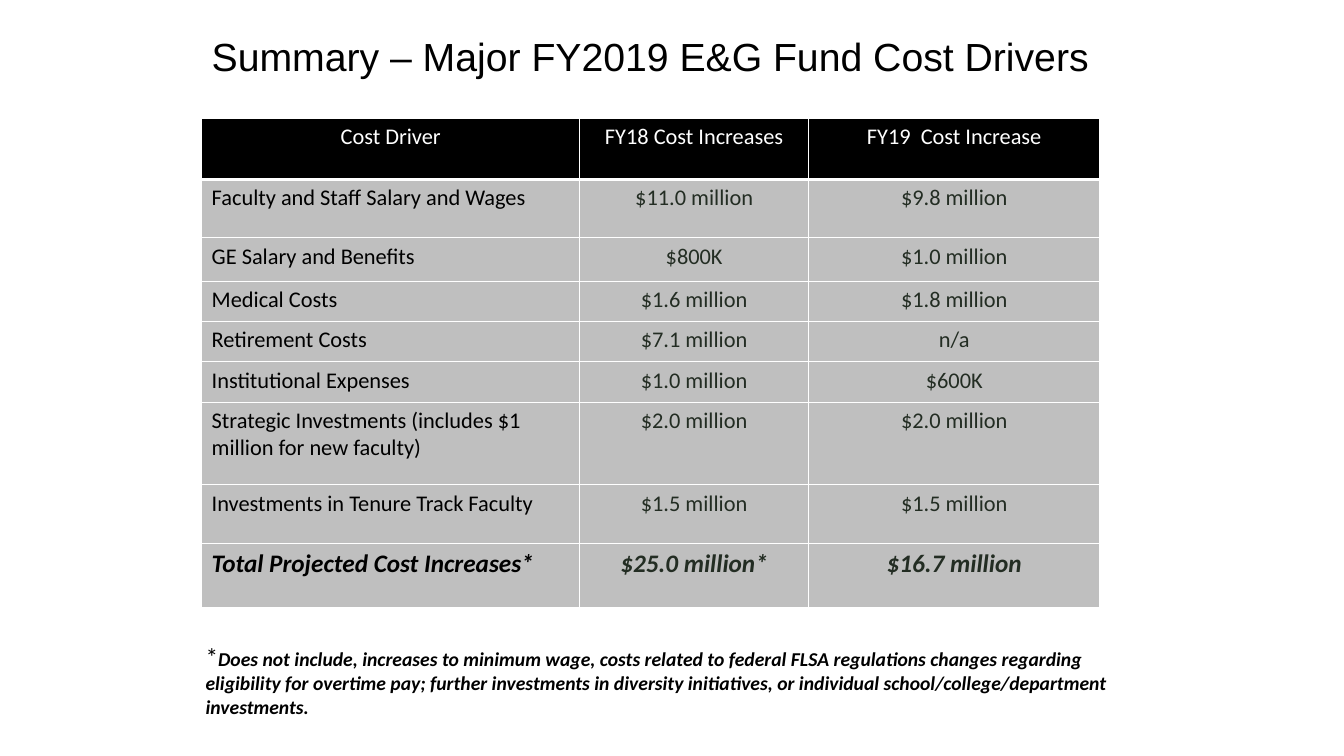
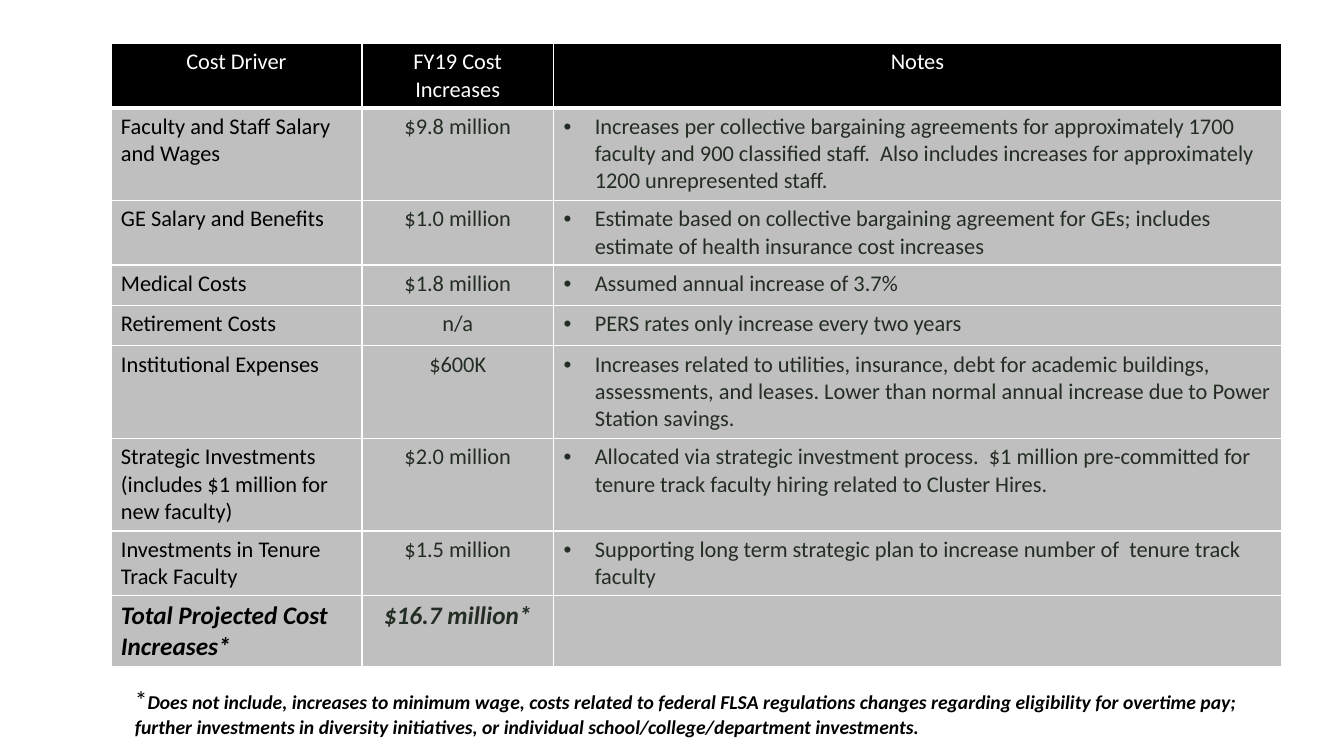
"""Build the two FY2019 cost driver slides."""
import pptx
import pptx.dml.color
import pptx.enum.text
import pptx.oxml
import pptx.oxml.ns
import pptx.util
from pptx.util import Inches

TITLE = "Summary – Major FY2019 E&G Fund Cost Drivers"
FOOTNOTE = (
    "Does not include, increases to minimum wage, costs related to federal FLSA "
    "regulations changes regarding eligibility for overtime pay; further investments in "
    "diversity initiatives, or individual school/college/department investments."
)
DRIVERS = [
    ("Faculty and Staff Salary and Wages", "$11.0 million", "$9.8 million",
     "Increases per collective bargaining agreements for approximately 1700 faculty and "
     "900 classified staff.  Also includes increases for approximately 1200 "
     "unrepresented staff."),
    ("GE Salary and Benefits", "$800K", "$1.0 million",
     "Estimate based on collective bargaining agreement for GEs; includes estimate of "
     "health insurance cost increases"),
    ("Medical Costs", "$1.6 million", "$1.8 million", "Assumed annual increase of 3.7%"),
    ("Retirement Costs", "$7.1 million", "n/a",
     "PERS rates only increase every two years"),
    ("Institutional Expenses", "$1.0 million", "$600K",
     "Increases related to utilities, insurance, debt for academic buildings, "
     "assessments, and leases. Lower than normal annual increase due to Power Station "
     "savings."),
    ("Strategic Investments (includes $1 million for new faculty)",
     "$2.0 million", "$2.0 million",
     "Allocated via strategic investment process.  $1 million pre-committed for tenure "
     "track faculty hiring related to Cluster Hires."),
    ("Investments in Tenure Track Faculty", "$1.5 million", "$1.5 million",
     "Supporting long term strategic plan to increase number of  tenure track faculty"),
]
TOTAL = "Total Projected Cost Increases*"
SUMMARY = {
    "place": (2, 1.17),
    "columns": [3.75, 2.27, 2.89],
    "heights": [0.61, 0.58, 0.43, 0.4, 0.4, 0.4, 0.82, 0.58, 0.64],
    "rows": [("Cost Driver", "FY18 Cost Increases", "FY19  Cost Increase")]
    + [(driver, fy18, fy19) for driver, fy18, fy19, note in DRIVERS]
    + [(TOTAL, "$25.0 million*", "$16.7 million")],
    "footnote": (1.94, 6.31, 9.27, 0.88),
}
DETAILS = {
    "place": (1.1, 0.43),
    "columns": [2.49, 1.9, 7.22],
    "heights": [0.64, 0.92, 0.64, 0.4, 0.4, 0.92, 0.92, 0.64, 0.7],
    "rows": [("Cost Driver", "FY19 Cost Increases", "Notes")]
    + [(driver, fy19, note) for driver, fy18, fy19, note in DRIVERS]
    + [(TOTAL, "$16.7 million*", "")],
    "footnote": (1.24, 6.74, 11.61, 0.64),
    "noted": True,
}

BLACK, WHITE, GREY, INK = "000000", "FFFFFF", "BFBFBF", "232D23"
TITLE_FONT = {"name": "Arial", "size": 28, "color": BLACK}
CELL_FONT = {"name": "Calibri", "size": 16, "bold": False, "italic": False}
TOTAL_FONT = {**CELL_FONT, "size": 18, "bold": True, "italic": True}
STAR_FONT = {"name": "Calibri", "size": 18, "color": BLACK}
FOOTNOTE_FONT = {**STAR_FONT, "size": 14, "bold": True, "italic": True}
ALIGN = pptx.enum.text.PP_ALIGN


def rgb(value):
    """Return a colour from a hex string."""
    return pptx.dml.color.RGBColor.from_string(value)


def add_run(paragraph, text, formats):
    """Add a run of text with the given font formats."""
    run = paragraph.add_run()
    run.text = text
    for key, value in formats.items():
        if key == "color":
            run.font.color.rgb = rgb(value)
        else:
            setattr(run.font, key, pptx.util.Pt(value) if key == "size" else value)


def add_bullet(paragraph):
    """Give a paragraph a round bullet with a hanging indent."""
    properties = paragraph._p.get_or_add_pPr()
    indent = Inches(0.31)
    properties.set("marL", str(indent))
    properties.set("indent", str(-indent))
    for tag, key, value in (("buFont", "typeface", "Arial"), ("buChar", "char", "•")):
        properties.append(pptx.oxml.parse_xml(
            f'<a:{tag} {pptx.oxml.ns.nsdecls("a")} {key}="{value}"/>'))


def add_borders(cell, header):
    """Draw white borders, thicker below the header."""
    for side in "LRTB":
        points = 3 if header and side == "B" else 1
        cell._tc.get_or_add_tcPr().append(pptx.oxml.parse_xml(
            f'<a:ln{side} {pptx.oxml.ns.nsdecls("a")} w="{pptx.util.Pt(points)}">'
            f'<a:solidFill><a:srgbClr val="{WHITE}"/></a:solidFill></a:ln{side}>'))


def add_cost_table(slide, content):
    """Add the table of cost drivers."""
    rows, columns, heights = content["rows"], content["columns"], content["heights"]
    costs = slide.shapes.add_table(
        len(rows), len(columns), *map(Inches, content["place"]),
        Inches(sum(columns)), Inches(sum(heights))).table
    costs.horz_banding = False
    for column, width in zip(costs.columns, columns):
        column.width = Inches(width)
    for index, (row, height, texts) in enumerate(zip(costs.rows, heights, rows)):
        row.height = Inches(height)
        header = index == 0
        font = TOTAL_FONT if index == len(rows) - 1 else CELL_FONT
        for position, (cell, text) in enumerate(zip(row.cells, texts)):
            add_borders(cell, header)
            cell.fill.solid()
            cell.fill.fore_color.rgb = rgb(BLACK if header else GREY)
            if not text:
                continue
            paragraph = cell.text_frame.paragraphs[0]
            noted = content.get("noted") and position == 2 and not header
            if noted:
                add_bullet(paragraph)
            paragraph.alignment = (
                ALIGN.LEFT if noted or (position == 0 and not header) else ALIGN.CENTER)
            color = WHITE if header else INK if position else BLACK
            add_run(paragraph, text, {**font, "color": color})


def add_footnote(slide, place):
    """Add the starred footnote below the table."""
    frame = slide.shapes.add_textbox(*map(Inches, place)).text_frame
    frame.word_wrap = True
    frame.auto_size = pptx.enum.text.MSO_AUTO_SIZE.SHAPE_TO_FIT_TEXT
    add_run(frame.paragraphs[0], "*", STAR_FONT)
    add_run(frame.paragraphs[0], FOOTNOTE, FOOTNOTE_FONT)


def add_title(slide):
    """Place and format the slide title."""
    title = slide.shapes.title
    for key, value in zip(("left", "top", "width", "height"), (2, -0.03, 9.42, 1.22)):
        setattr(title, key, Inches(value))
    title.text_frame.auto_size = pptx.enum.text.MSO_AUTO_SIZE.NONE
    title.text_frame.vertical_anchor = pptx.enum.text.MSO_ANCHOR.MIDDLE
    paragraph = title.text_frame.paragraphs[0]
    paragraph.alignment = ALIGN.LEFT
    paragraph.line_spacing = 0.9
    add_run(paragraph, TITLE, TITLE_FONT)


def main():
    """Build and save the presentation."""
    deck = pptx.Presentation()
    deck.slide_width, deck.slide_height = Inches(13.33), Inches(7.5)
    title_only, blank = deck.slide_layouts[5], deck.slide_layouts[6]
    for layout, content in ((title_only, SUMMARY), (blank, DETAILS)):
        slide = deck.slides.add_slide(layout)
        if layout is title_only:
            add_title(slide)
        add_cost_table(slide, content)
        add_footnote(slide, content["footnote"])
    deck.save("out.pptx")


if __name__ == "__main__":
    main()
